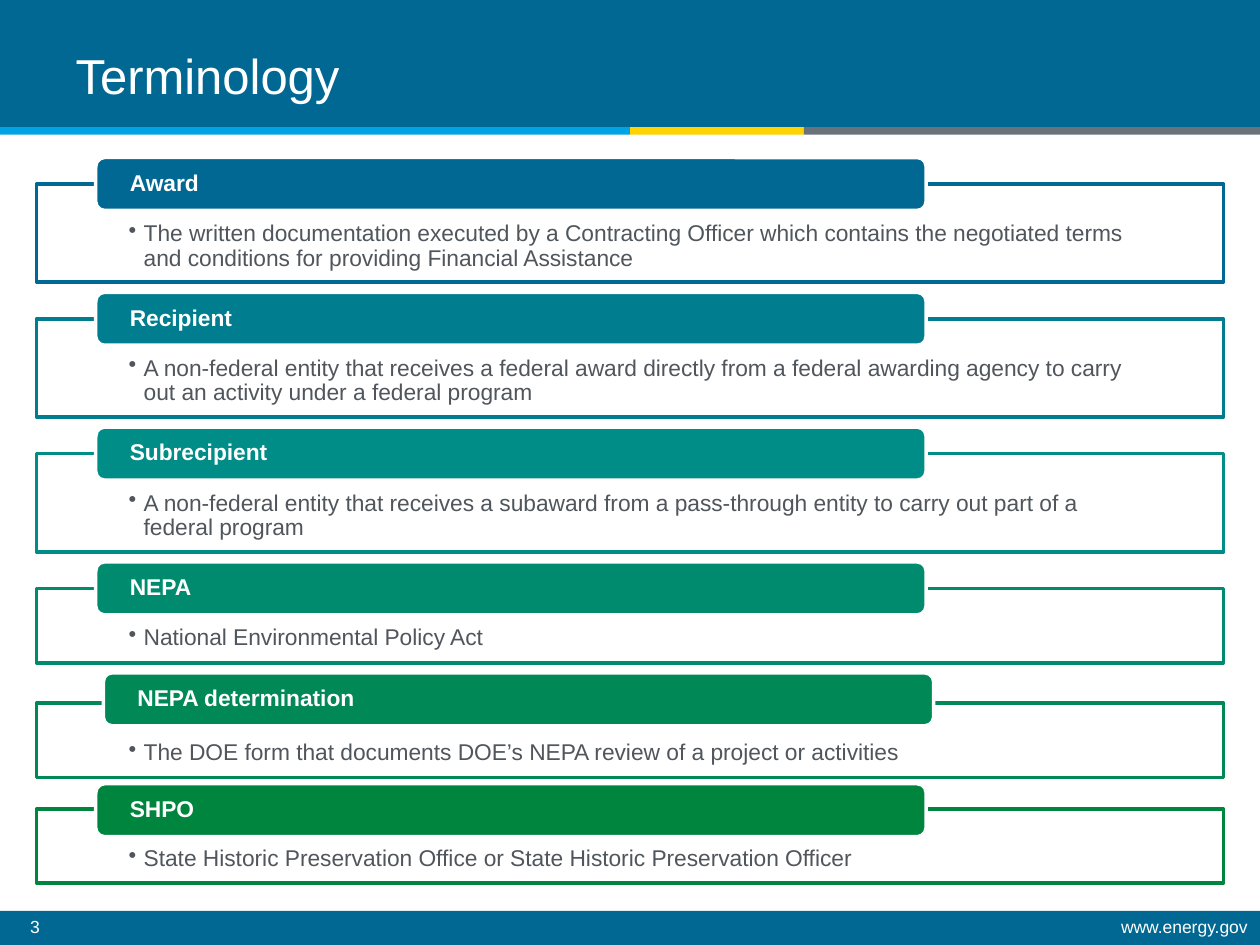
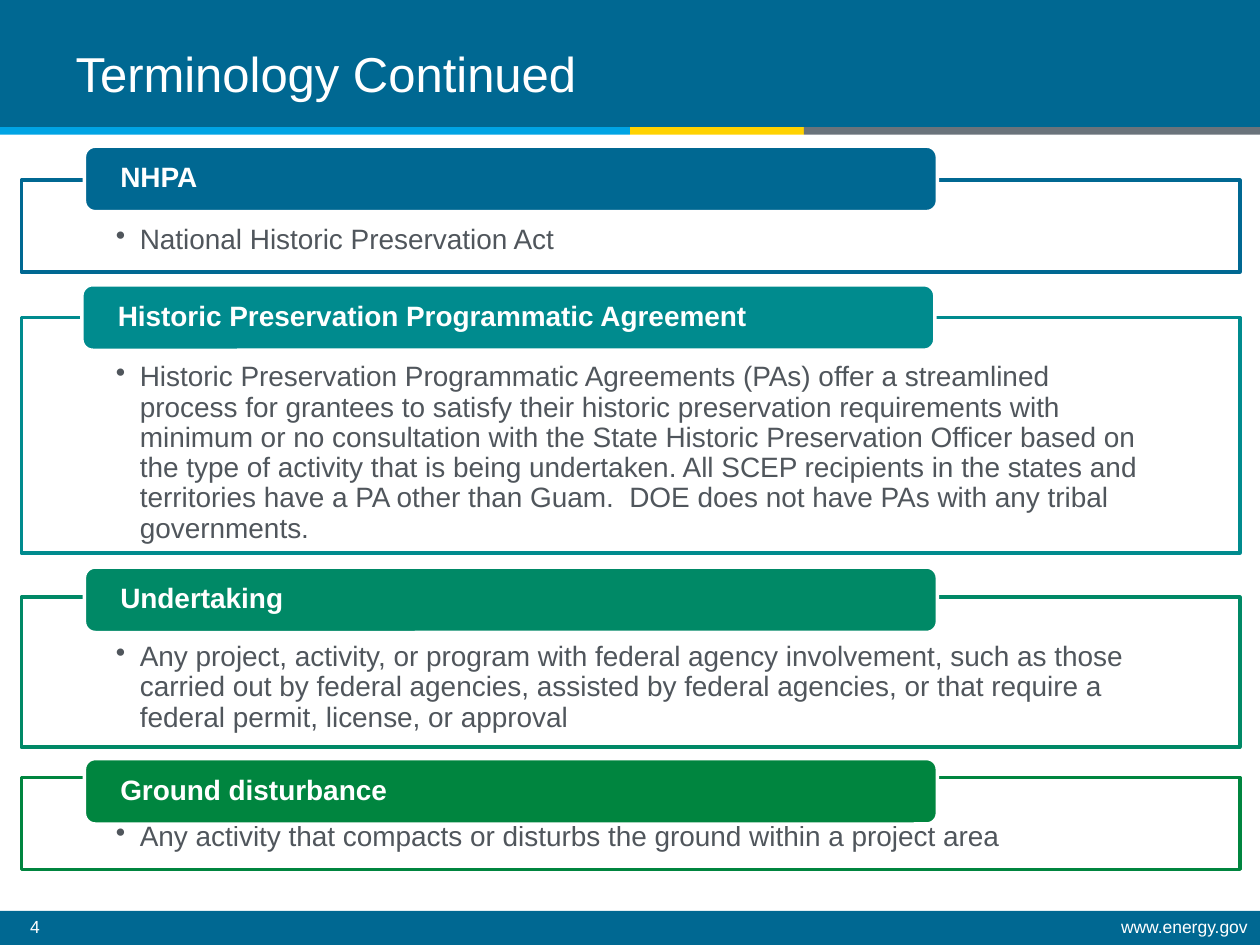
from pptx import Presentation
from pptx.dml.color import RGBColor as Rgb
from pptx.enum.shapes import MSO_SHAPE as Shape
from pptx.enum.text import MSO_ANCHOR as Anchor, MSO_AUTO_SIZE as Fit, PP_ALIGN as Align
from pptx.oxml.ns import qn
from pptx.util import Pt
from lxml.etree import SubElement as Sub

PX = 9144
FONT = "Arial"
HEX = {
    "blue": "006892", "sky": "00A4E4", "gold": "FFD200", "grey": "6A737B",
    "white": "FFFFFF", "ink": "50565C", "cyan": "007D8F", "teal": "008D87",
    "aqua": "008B8E", "jade": "008A6E", "mint": "008966", "leaf": "008856",
    "green": "00853F",
}
SMALL = {"left": 29, "wide": 942, "tab": (76, 659, 42), "size": 13,
         "pad": (73, 30, 73, 10), "inset": 25, "hang": 12}
LARGE = {"left": 17, "wide": 967, "tab": (67, 677, 52), "size": 16,
         "pad": (75, 36, 75, 12), "inset": 26, "hang": 19}

TERMS = [
    ("Award", "blue", 146, 78, 21, 0,
     "The written documentation executed by a Contracting Officer which contains "
     "the negotiated terms and conditions for providing Financial Assistance"),
    ("Recipient", "cyan", 253, 78, 21, 0,
     "A non-federal entity that receives a federal award directly from a federal "
     "awarding agency to carry out an activity under a federal program"),
    ("Subrecipient", "teal", 360, 78, 21, 0,
     "A non-federal entity that receives a subaward from a pass-through entity "
     "to carry out part of a federal program"),
    ("NEPA", "jade", 467, 59, 21, 0, "National Environmental Policy Act"),
    ("NEPA determination", "leaf", 558, 59, 24, 6,
     "The DOE form that documents DOE’s NEPA review of a project or activities"),
    ("SHPO", "green", 642, 59, 20, 0,
     "State Historic Preservation Office or State Historic Preservation Officer"),
]
MORE = [
    ("NHPA", "blue", 143, 73, 27, 0, "National Historic Preservation Act"),
    ("Historic Preservation Programmatic Agreement", "aqua", 252, 187, 26, -2,
     "Historic Preservation Programmatic Agreements (PAs) offer a streamlined "
     "process for grantees to satisfy their historic preservation requirements "
     "with minimum or no consultation with the State Historic Preservation "
     "Officer based on the type of activity that is being undertaken. All SCEP "
     "recipients in the states and territories have a PA other than Guam.  DOE "
     "does not have PAs with any tribal governments."),
    ("Undertaking", "mint", 474, 119, 24, 0,
     "Any project, activity, or program with federal agency involvement, such as "
     "those carried out by federal agencies, assisted by federal agencies, or "
     "that require a federal permit, license, or approval"),
    ("Ground disturbance", "green", 617, 73, 15, 0,
     "Any activity that compacts or disturbs the ground within a project area"),
]


def tint(name):
    return Rgb.from_string(HEX[name])


def scale(box):
    return [n * PX for n in box]


def draw(slide, kind, box, fill, edge=None):
    item = slide.shapes.add_shape(kind, *scale(box))
    item.shadow.inherit = False
    item.fill.solid()
    item.fill.fore_color.rgb = tint(fill)
    if edge:
        item.line.color.rgb = tint(edge)
        item.line.width = Pt(2)
    else:
        item.line.fill.background()
    return item


def write(item, text, size, color="white", bold=False, align=Align.LEFT,
          anchor=Anchor.TOP, pad=(10, 5, 10, 5), space=0.9, hang=0):
    frame = item.text_frame
    frame.text = text
    frame.word_wrap = True
    frame.auto_size = Fit.NONE
    frame.vertical_anchor = anchor
    (frame.margin_left, frame.margin_top,
     frame.margin_right, frame.margin_bottom) = scale(pad)
    para = frame.paragraphs[0]
    para.alignment = align
    para.line_spacing = space
    if hang:
        props = para._p.get_or_add_pPr()
        props.set("marL", str(hang * PX))
        props.set("indent", str(-hang * PX))
        Sub(props, qn("a:buChar")).set("char", "•")
    font = para.runs[0].font
    font.name, font.size, font.bold = FONT, Pt(size), bold
    font.color.rgb = tint(color)


def label(slide, box, text, align=Align.LEFT):
    item = slide.shapes.add_textbox(*scale(box))
    write(item, text, 10, align=align)
    return item


def brand(slide, layout):
    bands = [((0, 0, 1000, 101), "blue"), ((0, 723, 1000, 27), "blue"),
             ((0, 101, 500, 6), "sky"), ((500, 101, 138, 6), "gold"),
             ((638, 101, 362, 6), "grey")]
    parts = [draw(slide, Shape.RECTANGLE, box, fill) for box, fill in bands]
    parts.append(label(slide, (599, 724, 401, 26), "www.energy.gov", Align.RIGHT))
    for part in parts:
        layout.shapes.element.append(part.element)


def head(slide, text, top):
    title = slide.shapes.title
    title.left, title.top, title.width, title.height = scale((50, top, 742, 125))
    write(title, text, 28, anchor=Anchor.MIDDLE, space=Pt(28))


def term(slide, style, name, color, top, high, rise, shift, text):
    body = draw(slide, Shape.RECTANGLE,
                (style["left"], top, style["wide"], high), "white", color)
    shade = body.element.spPr.find(qn("a:solidFill"))[0]
    Sub(shade, qn("a:alpha")).set("val", "90000")
    write(body, text, style["size"], "ink", pad=style["pad"], hang=style["hang"])
    left, wide, tall = style["tab"]
    tab = draw(slide, Shape.ROUNDED_RECTANGLE,
               (left + shift, top - rise, wide, tall), color, "white")
    inset = style["inset"]
    write(tab, name, style["size"], bold=True, anchor=Anchor.MIDDLE,
          pad=(inset, 0, inset, 0))


def main():
    deck = Presentation()
    deck.slide_width, deck.slide_height = scale((1000, 750))
    layout = deck.slide_layouts[5]
    pages = [("Terminology", 1, SMALL, TERMS),
             ("Terminology Continued", -1, LARGE, MORE)]
    for count, (text, top, style, terms) in enumerate(pages, 3):
        slide = deck.slides.add_slide(layout)
        if count == 3:
            brand(slide, layout)
        head(slide, text, top)
        label(slide, (14, 724, 797, 26), str(count))
        for row in terms:
            term(slide, style, *row)
    deck.save("out.pptx")


if __name__ == "__main__":
    main()
